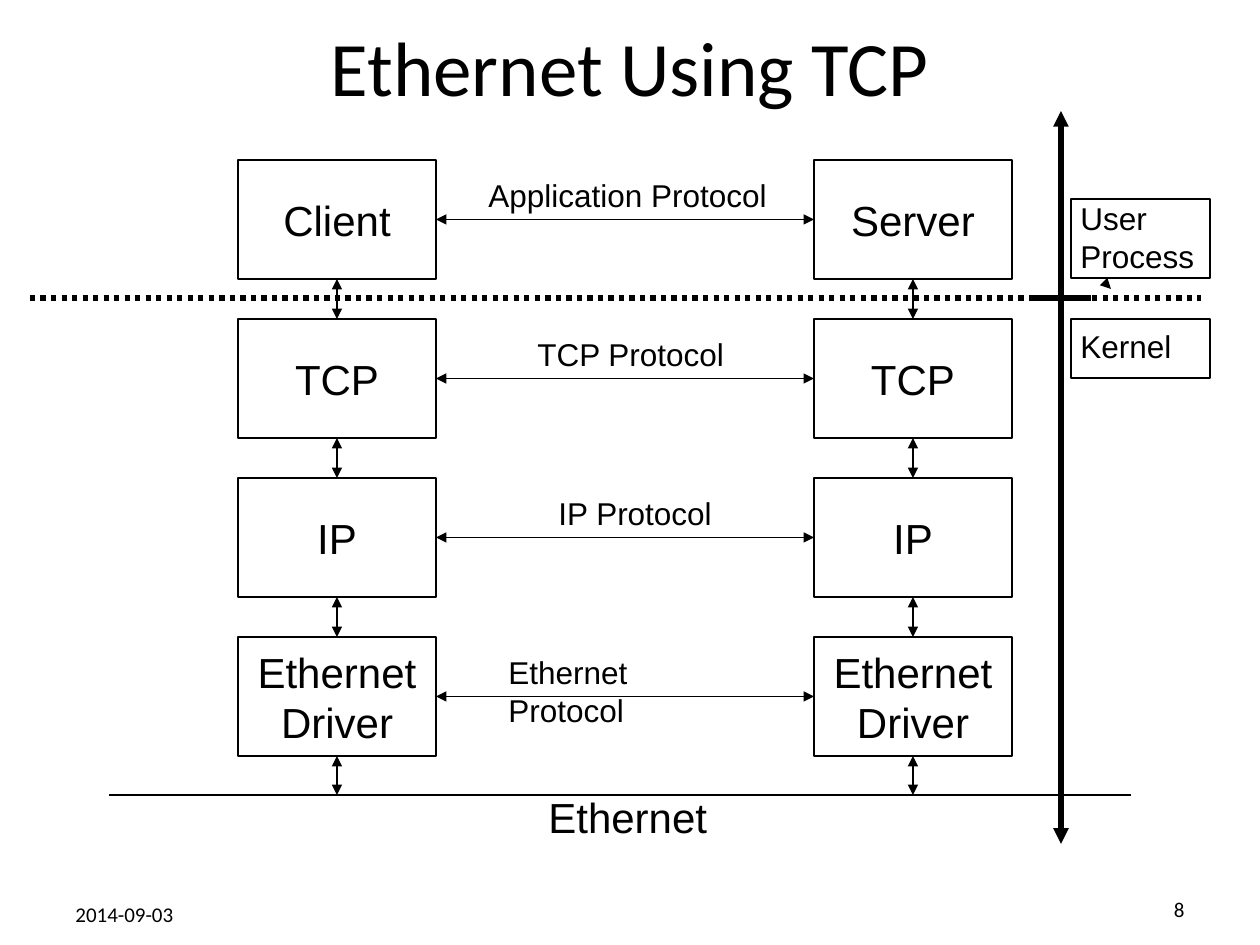
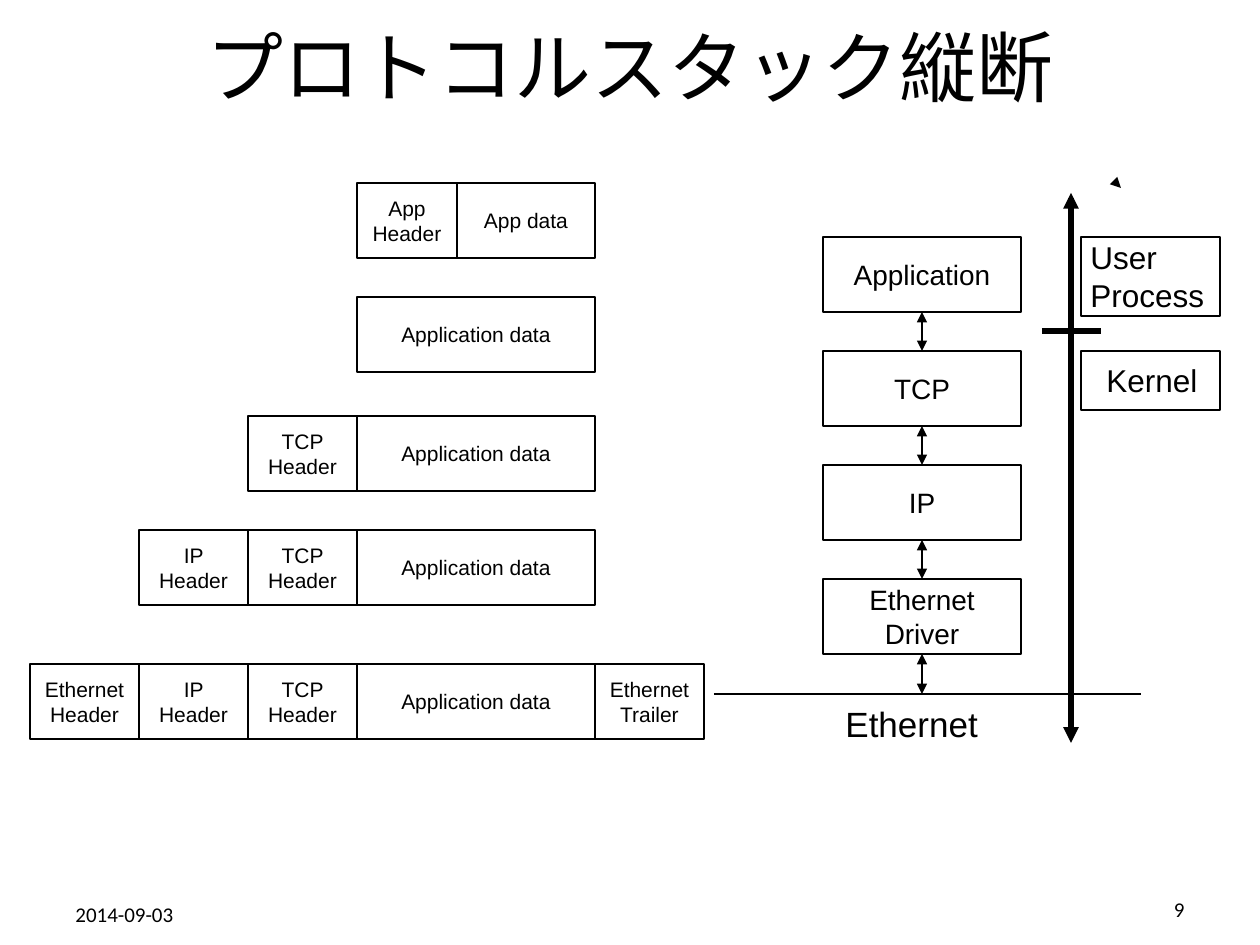
from dataclasses import dataclass
from itertools import pairwise

from pptx import Presentation
from pptx.dml.color import RGBColor
from pptx.enum.dml import MSO_LINE
from pptx.enum.shapes import MSO_CONNECTOR, MSO_SHAPE
from pptx.enum.text import MSO_ANCHOR, MSO_AUTO_SIZE, PP_ALIGN
from pptx.oxml import parse_xml
from pptx.oxml.ns import nsdecls
from pptx.shapes.autoshape import Shape
from pptx.shapes.connector import Connector
from pptx.slide import Slide
from pptx.util import Emu, Pt

PX_PER_INCH = 126
TOP, LEFT, BOTTOM, RIGHT = range(4)
TITLE_ONLY = 5


@dataclass(frozen=True)
class Theme:
    ink: RGBColor = RGBColor(0, 0, 0)
    paper: RGBColor = RGBColor(255, 255, 255)
    heading_font: str = "Calibri"
    body_font: str = "Arial"
    title: int = 44
    layer: int = 24
    medium: int = 20
    label: int = 18
    small_layer: int = 16
    small: int = 12
    thin: float = 0.75
    thick: float = 3


THEME = Theme()


@dataclass(frozen=True)
class Area:
    left: int
    top: int
    width: int
    height: int


@dataclass(frozen=True)
class Label:
    text: str
    area: Area


@dataclass(frozen=True)
class Stack:
    """Layers of equal height, the last one linked to the Ethernet wire."""
    layers: tuple[str, ...]
    left: int
    top: int
    height: int
    pitch: int
    size: int
    width: int = 198


@dataclass(frozen=True)
class SpaceAxis:
    """Vertical arrow that divides user space from the kernel."""
    x: int
    top: int
    start: int
    bottom: int
    tick: int
    boxes: tuple[Area, Area]
    labels: tuple[Label, Label]


@dataclass(frozen=True)
class Field:
    text: str
    width: int


@dataclass(frozen=True)
class Packet:
    top: int
    headers: tuple[Field, ...]
    body: tuple[Field, ...]


def px(length: int) -> Emu:
    return Emu(round(length * 914400 / PX_PER_INCH))


def place(area: Area) -> tuple[Emu, ...]:
    return px(area.left), px(area.top), px(area.width), px(area.height)


def write(shape: Shape, text: str, size: int, align: PP_ALIGN = PP_ALIGN.LEFT,
          font: str = THEME.body_font) -> None:
    shape.text_frame.text = text
    for para in shape.text_frame.paragraphs:
        para.alignment = align
        for span in para.runs:
            span.font.name = font
            span.font.size = Pt(size)
            span.font.color.rgb = THEME.ink


def add_box(page: Slide, area: Area, text: str = "", size: int = THEME.small,
            wrap: bool = False) -> Shape:
    box = page.shapes.add_shape(MSO_SHAPE.RECTANGLE, *place(area))
    box.shadow.inherit = False
    box.fill.background()
    box.line.color.rgb = THEME.ink
    box.line.width = Pt(THEME.thin)
    if text:
        write(box, text, size, PP_ALIGN.CENTER)
        box.text_frame.word_wrap = wrap
        box.text_frame.vertical_anchor = MSO_ANCHOR.MIDDLE
    return box


def add_label(page: Slide, label: Label, size: int) -> None:
    box = page.shapes.add_textbox(*place(label.area))
    write(box, label.text, size)
    box.text_frame.word_wrap = False
    box.text_frame.auto_size = MSO_AUTO_SIZE.SHAPE_TO_FIT_TEXT


def add_line(page: Slide, start: tuple[int, int], end: tuple[int, int],
             width: float = THEME.thin, ends: tuple[str, ...] = (),
             dash: MSO_LINE | None = None) -> Connector:
    line = page.shapes.add_connector(
        MSO_CONNECTOR.STRAIGHT, *map(px, start), *map(px, end))
    line.line.color.rgb = THEME.ink
    line.line.width = Pt(width)
    if dash is not None:
        line.line.dash_style = dash
    for name in ends:
        line.get_or_add_ln().append(
            parse_xml(f'<a:{name} {nsdecls("a")} type="triangle"/>'))
    line._element.spPr.append(parse_xml(f'<a:effectLst {nsdecls("a")}/>'))
    return line


def add_link(page: Slide, start: tuple[int, int], end: tuple[int, int]) -> Connector:
    return add_line(page, start, end, ends=("headEnd", "tailEnd"))


def add_stack(page: Slide, stack: Stack, wire: int) -> list[Shape]:
    tops = [stack.top + row * stack.pitch for row in range(len(stack.layers))]
    boxes = [add_box(page, Area(stack.left, top, stack.width, stack.height), text, stack.size)
             for top, text in zip(tops, stack.layers)]
    middle = stack.left + stack.width // 2
    for top, (upper, lower) in zip(tops, pairwise(boxes)):
        link = add_link(page, (middle, top + stack.height), (middle, top + stack.pitch))
        link.begin_connect(upper, BOTTOM)
        link.end_connect(lower, TOP)
    link = add_link(page, (middle, tops[-1] + stack.height), (middle, wire))
    link.begin_connect(boxes[-1], BOTTOM)
    return boxes


def add_space_axis(page: Slide, axis: SpaceAxis, tip: tuple[int, int]) -> None:
    for end in (axis.top, axis.bottom):
        add_line(page, (axis.x, axis.start), (axis.x, end), THEME.thick, ("tailEnd",))
    add_line(page, (axis.x - 29, axis.tick), (axis.x + 30, axis.tick), THEME.thick)
    add_line(page, (tip[0] - 1, tip[1] - 1), tip, ends=("tailEnd",))
    for area, label in zip(axis.boxes, axis.labels):
        add_box(page, area)
        add_label(page, label, THEME.label)


def add_packet(page: Slide, packet: Packet, body_left: int, height: int) -> None:
    left = body_left - sum(field.width for field in packet.headers)
    for field in packet.headers + packet.body:
        add_box(page, Area(left, packet.top, field.width, height), field.text, wrap=True)
        left += field.width


def add_page(deck: Presentation, title: str, number: int) -> Slide:
    page = deck.slides.add_slide(deck.slide_layouts[TITLE_ONLY])
    page.background.fill.solid()
    page.background.fill.fore_color.rgb = THEME.paper
    heading = page.shapes.title
    heading.left, heading.top, heading.width, heading.height = place(Area(63, -13, 1134, 158))
    heading.text_frame.vertical_anchor = MSO_ANCHOR.MIDDLE
    write(heading, title, THEME.title, PP_ALIGN.CENTER, THEME.heading_font)
    footers = ((Area(63, 895, 294, 39), "2014-09-03", PP_ALIGN.LEFT),
               (Area(903, 890, 294, 39), str(number), PP_ALIGN.RIGHT))
    for area, text, align in footers:
        footer = page.shapes.add_textbox(*place(area))
        footer.text_frame.word_wrap = True
        write(footer, text, THEME.small, align, THEME.heading_font)
    return page


def build_protocol_page(deck: Presentation) -> None:
    page = add_page(deck, "Ethernet Using TCP", 8)

    # Ethernet wire and the two hosts above it
    wire = 795
    add_line(page, (109, wire), (1131, wire))
    add_label(page, Label("Ethernet", Area(536, 785, 184, 63)), THEME.layer)
    top, height, pitch = 160, 119, 159
    lower_layers = ("TCP", "IP", "Ethernet\nDriver")
    client, server = (
        add_stack(page, Stack((name, *lower_layers), left, top, height, pitch, THEME.layer), wire)
        for name, left in (("Client", 238), ("Server", 814)))

    # Protocol spoken between peers on each layer
    protocols = (("Application", 476, 304), ("TCP", 525, 213),
                 ("IP", 546, 179), ("Ethernet", 496, 268))
    for row, (name, left, width) in enumerate(protocols):
        y = top + row * pitch + height // 2
        link = add_link(page, (436, y), (814, y))
        link.begin_connect(client[row], RIGHT)
        link.end_connect(server[row], LEFT)
        add_label(page, Label(f"{name} Protocol", Area(left, y - 49, width, 50)), THEME.label)

    # Border between user process and kernel
    border = 298
    add_line(page, (30, border), (1201, border), THEME.thick, dash=MSO_LINE.ROUND_DOT)
    add_space_axis(page, SpaceAxis(
        x=1061, top=111, start=border, bottom=844, tick=border,
        boxes=(Area(1071, 199, 139, 79), Area(1071, 319, 139, 59)),
        labels=(Label("User\nProcess", Area(1068, 193, 139, 88)),
                Label("Kernel", Area(1068, 321, 116, 50)))), tip=(1111, 289))


def build_packet_page(deck: Presentation) -> None:
    page = add_page(deck, "プロトコルスタック縦断", 9)
    height = 75

    # Protocol stack on the wire
    wire = 694
    add_line(page, (714, wire), (1141, wire))
    add_label(page, Label("Ethernet", Area(833, 696, 159, 55)), THEME.medium)
    layers = ("Application", "TCP", "IP", "Ethernet\nDriver")
    add_stack(page, Stack(layers, 823, 237, height, 114, THEME.small_layer), wire)
    add_space_axis(page, SpaceAxis(
        x=1071, top=193, start=198, bottom=743, tick=331,
        boxes=(Area(1081, 237, 139, 79), Area(1081, 351, 139, 59)),
        labels=(Label("User\nProcess", Area(1078, 232, 139, 88)),
                Label("Kernel", Area(1094, 355, 116, 50)))), tip=(1121, 188))

    # Packet as it grows on its way down
    ethernet, ip, tcp = (Field(f"{name} Header", 109) for name in ("Ethernet", "IP", "TCP"))
    data, trailer = Field("Application data", 238), Field("Ethernet Trailer", 109)
    packets = (
        Packet(183, (), (Field("App\nHeader", 100), Field("App data", 138))),
        Packet(297, (), (data,)),
        Packet(416, (tcp,), (data,)),
        Packet(530, (ip, tcp), (data,)),
        Packet(664, (ethernet, ip, tcp), (data, trailer)),
    )
    for packet in packets:
        add_packet(page, packet, body_left=357, height=height)


def main() -> None:
    deck = Presentation()
    deck.slide_width, deck.slide_height = px(1260), px(945)
    build_protocol_page(deck)
    build_packet_page(deck)
    deck.save("out.pptx")


if __name__ == "__main__":
    main()
